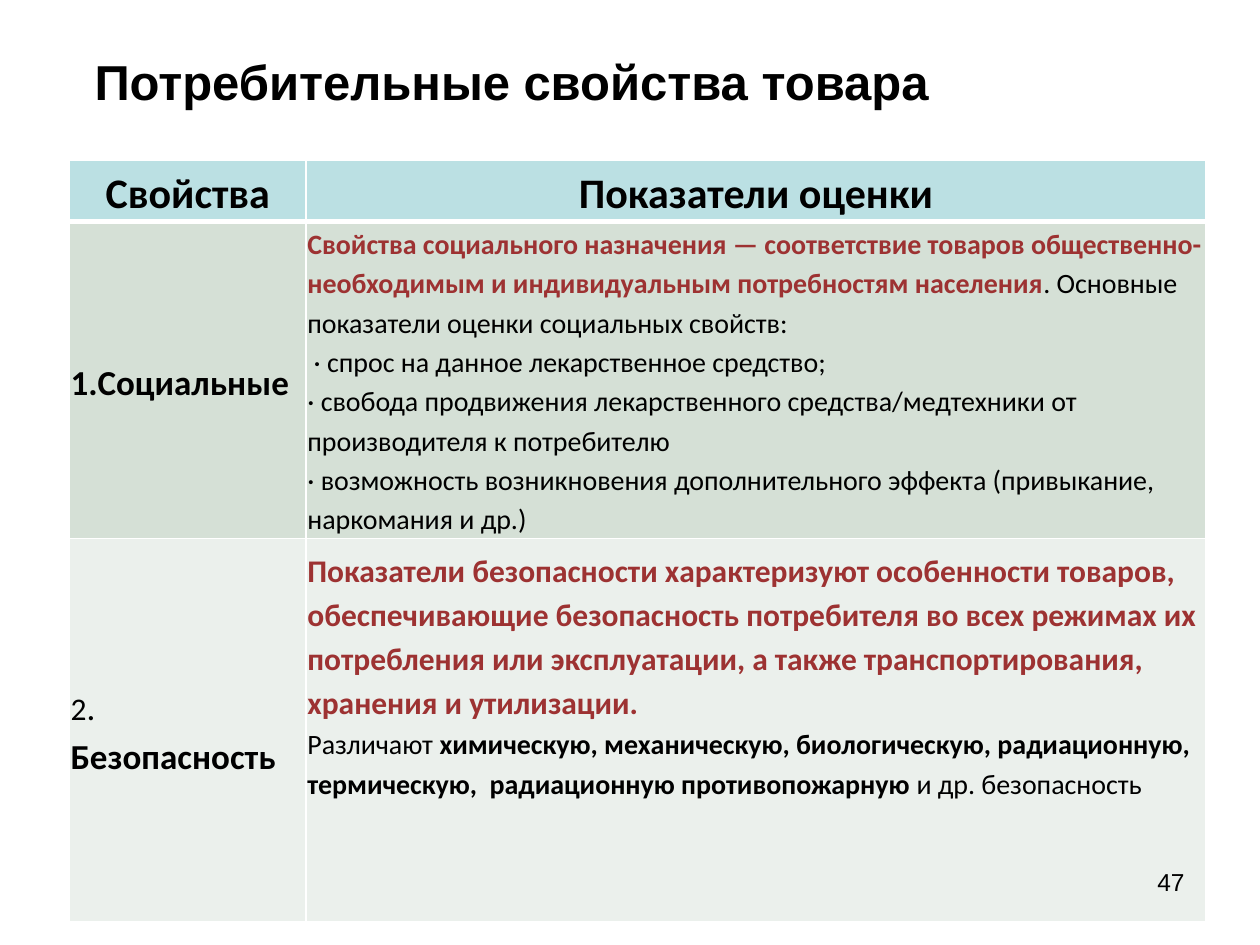
from dataclasses import dataclass

from lxml import etree
from pptx import Presentation
from pptx.dml.color import RGBColor
from pptx.enum.text import MSO_ANCHOR, MSO_AUTO_SIZE, PP_ALIGN
from pptx.oxml.ns import qn
from pptx.util import Inches, Pt

LEFT, CENTER, RIGHT = PP_ALIGN.LEFT, PP_ALIGN.CENTER, PP_ALIGN.RIGHT
MIDDLE = MSO_ANCHOR.MIDDLE
NO_AUTOFIT = MSO_AUTO_SIZE.NONE
BLACK, RED, WHITE = "000000", "9D3232", "FFFFFF"
TITLE_ONLY = 5
COLUMN_WIDTHS = (1.88, 7.14)
ROW_HEIGHTS = (0.43, 2.32, 3.04)
ROW_FILLS = ("BBE0E3", "D5E0D6", "EBF0EC")
THIN, THICK = 1, 3
CELL_MARGIN = 0.01


@dataclass
class Span:
    text: str
    size: float
    bold: bool = False
    color: str = BLACK
    font: str = "Calibri"


@dataclass
class Cell:
    paragraphs: list[list[Span]]
    align: PP_ALIGN = LEFT
    bottom_margin: float = CELL_MARGIN


def rgb(color: str) -> RGBColor:
    return RGBColor.from_string(color)


def write_paragraph(para, spans: list[Span], align: PP_ALIGN = LEFT) -> None:
    para.alignment = align
    for span in spans:
        run = para.add_run()
        run.text = span.text
        run.font.name = span.font
        run.font.size = Pt(span.size)
        run.font.bold = span.bold
        run.font.color.rgb = rgb(span.color)


def add_borders(cell, top: float, bottom: float) -> None:
    properties = cell._tc.get_or_add_tcPr()
    for side, width in (("L", THIN), ("R", THIN), ("T", top), ("B", bottom)):
        line = etree.SubElement(properties, qn(f"a:ln{side}"), w=str(Pt(width)))
        fill = etree.SubElement(line, qn("a:solidFill"))
        etree.SubElement(fill, qn("a:srgbClr"), val=WHITE)


def fill_cell(cell, content: Cell, row: int) -> None:
    add_borders(cell, THICK if row == 1 else THIN, THICK if row == 0 else THIN)
    cell.fill.solid()
    cell.fill.fore_color.rgb = rgb(ROW_FILLS[row])
    cell.vertical_anchor = MIDDLE
    cell.margin_left = cell.margin_right = cell.margin_top = Inches(CELL_MARGIN)
    cell.margin_bottom = Inches(content.bottom_margin)
    frame = cell.text_frame
    for index, spans in enumerate(content.paragraphs):
        para = frame.add_paragraph() if index else frame.paragraphs[0]
        write_paragraph(para, spans, content.align)
        para.line_spacing = 1.15


def add_property_table(slide, rows: list[list[Cell]]) -> None:
    table = slide.shapes.add_table(
        len(ROW_HEIGHTS), len(COLUMN_WIDTHS), Inches(0.55), Inches(1.27),
        Inches(sum(COLUMN_WIDTHS)), Inches(sum(ROW_HEIGHTS))).table
    table.first_row = table.horz_banding = False
    for column, width in zip(table.columns, COLUMN_WIDTHS):
        column.width = Inches(width)
    for index, (row, height) in enumerate(zip(table.rows, ROW_HEIGHTS)):
        row.height = Inches(height)
        for cell, content in zip(row.cells, rows[index]):
            fill_cell(cell, content, index)


def add_title(slide, text: str) -> None:
    title = slide.shapes.title
    title.left, title.top = Inches(0.59), Inches(0.28)
    title.width, title.height = Inches(8.91), Inches(0.72)
    title.text_frame.auto_size = NO_AUTOFIT
    title.text_frame.vertical_anchor = MIDDLE
    para = title.text_frame.paragraphs[0]
    para._p.get_or_add_pPr().set("marL", str(Inches(0.06)))
    write_paragraph(para, [Span(text, 28, True, font="Arial")])


def add_page_number(slide, number: str) -> None:
    box = slide.shapes.add_textbox(Inches(7.17), Inches(6.83), Inches(2.33), Inches(0.52))
    box.text_frame.word_wrap = True
    write_paragraph(box.text_frame.paragraphs[0], [Span(number, 14, font="Arial")], RIGHT)


HEADER = [Cell([[Span(text, 24, True)]], CENTER) for text in ("Свойства", "Показатели оценки")]

SOCIAL = [
    Cell([[Span("1.Социальные", 20, True)]]),
    Cell([
        [Span("Свойства социального назначения — соответствие товаров общественно-необходимым "
              "и индивидуальным потребностям населения", 16, True, RED),
         Span(". Основные показатели оценки социальных свойств:", 16)],
        [Span(" · спрос на данное лекарственное средство;", 16)],
        [Span("· свобода продвижения лекарственного средства/медтехники "
              "от производителя к потребителю", 16)],
        [Span("· возможность возникновения дополнительного эффекта "
              "(привыкание, наркомания и др.)", 16)],
    ]),
]

SAFETY = [
    Cell([[Span("2", 18), Span(". ", 20), Span("Безопасность", 20, True)]]),
    Cell([
        [Span("Показатели безопасности характеризуют особенности товаров, обеспечивающие "
              "безопасность потребителя во всех режимах их потребления или эксплуатации, "
              "а также транспортирования, хранения и утилизации.", 18, True, RED)],
        [Span("Различают ", 16),
         Span("химическую, механическую, биологическую, радиационную, термическую,  "
              "радиационную противопожарную ", 16, True),
         Span("и др. безопасность", 16)],
    ], bottom_margin=0.9),
]


def main() -> None:
    deck = Presentation()
    deck.slide_width, deck.slide_height = Inches(10), Inches(7.5)
    slide = deck.slides.add_slide(deck.slide_layouts[TITLE_ONLY])
    add_title(slide, "Потребительные свойства товара")
    add_property_table(slide, [HEADER, SOCIAL, SAFETY])
    add_page_number(slide, "47")
    deck.save("out.pptx")


if __name__ == "__main__":
    main()
